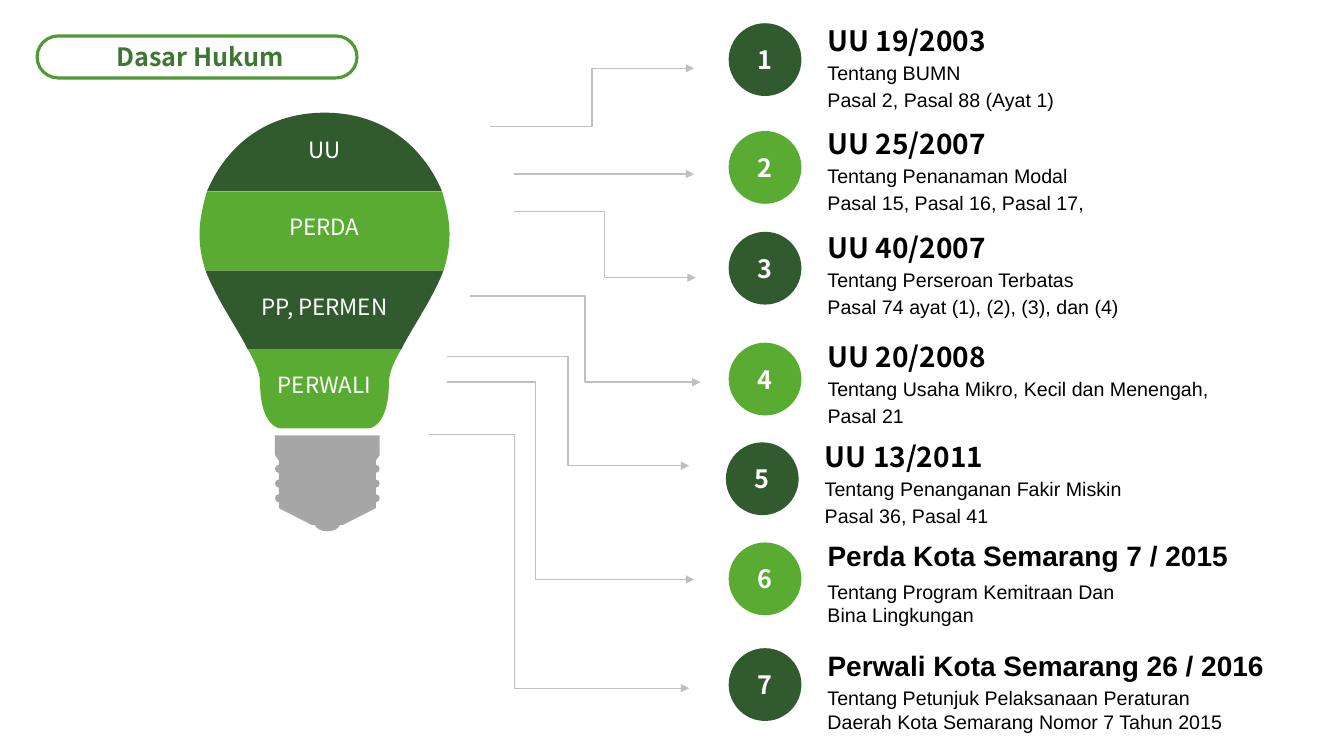
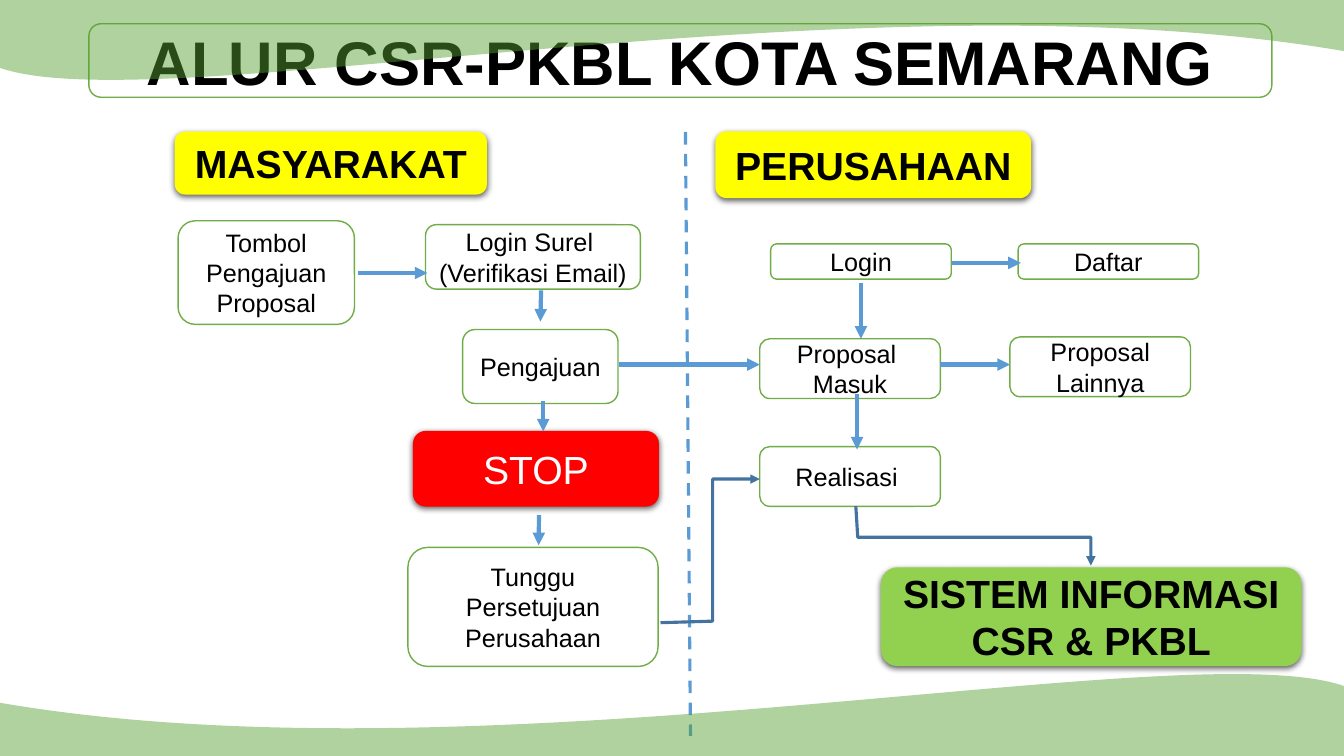
from dataclasses import dataclass

from lxml import etree
from pptx import Presentation
from pptx.dml.color import RGBColor
from pptx.enum.dml import MSO_LINE
from pptx.enum.shapes import MSO_CONNECTOR, MSO_SHAPE
from pptx.enum.text import MSO_ANCHOR, PP_ALIGN
from pptx.oxml.ns import qn
from pptx.util import Pt

WIDTH, HEIGHT = 960, 540
SANS, NOTO = "Arial", "Noto Sans CJK SC"

BLACK = RGBColor(0, 0, 0)
WHITE = RGBColor(255, 255, 255)
DARK = RGBColor(0x31, 0x5B, 0x2F)
LIGHT = RGBColor(0x5A, 0xAB, 0x31)
GRAY = RGBColor(0xA6, 0xA6, 0xA6)
SILVER = RGBColor(0xBF, 0xBF, 0xBF)
RIM = RGBColor(0x4F, 0x9B, 0x33)
MOSS = RGBColor(0x3C, 0x78, 0x32)
EDGE = RGBColor(0x70, 0xAD, 0x47)
YELLOW = RGBColor(255, 255, 0)
RED = RGBColor(255, 0, 0)
LIME = RGBColor(0x92, 0xD0, 0x50)
BLUE = RGBColor(0x5B, 0x9B, 0xD5)
NAVY = RGBColor(0x43, 0x73, 0x9E)
WAVE = RGBColor(0x55, 0xA0, 0x33)

ROUND, OVAL = MSO_SHAPE.ROUNDED_RECTANGLE, MSO_SHAPE.OVAL
STRAIGHT, ELBOW = MSO_CONNECTOR.STRAIGHT, MSO_CONNECTOR.ELBOW
LEFT, CENTER = PP_ALIGN.LEFT, PP_ALIGN.CENTER
TOP, MIDDLE = MSO_ANCHOR.TOP, MSO_ANCHOR.MIDDLE
DASH = MSO_LINE.DASH


@dataclass(frozen=True)
class Band:
    label: str
    color: RGBColor
    text_y: float
    half: list


@dataclass(frozen=True)
class Law:
    title: str
    body: str
    disc_y: float
    text_y: float
    start: tuple
    end: tuple
    wide: float = 246
    bend: float = 0.5
    font: str = NOTO
    gap: float = 26.5
    shift: float = 0


@dataclass(frozen=True)
class Node:
    text: str
    left: float
    top: float
    width: float
    height: float
    fill: RGBColor = WHITE
    size: float = 18
    bold: bool = False
    color: RGBColor = BLACK


# Half outlines run downwards; x is measured from the axis of symmetry.
# A pair is a corner, six numbers are a Bezier curve.
BULB_X, CAP_X = 231.8, 233.8
BANDS = [
    Band("UU", DARK, 97, [(0, 80.5), (45, 80.5, 72, 108, 84, 136.8)]),
    Band("PERDA", LIGHT, 152, [
        (84, 136.8), (87, 147, 89.3, 157.7, 89.3, 167),
        (89.3, 176.4, 87.8, 184.3, 85, 193.3)]),
    Band("PP, PERMEN", DARK, 209.5, [
        (85, 193.3), (77, 214, 63, 233.3, 54.7, 249.7)]),
    Band("PERWALI", LIGHT, 265, [
        (54.7, 249.7), (49.6, 258.5, 46, 266.4, 46, 273.6),
        (46, 297.4, 37.4, 306, 31, 306)]),
]
RIDGES = [step for y in (332, 342.5, 353) for step in (
    (34.6, y), (38.3, y, 38.3, y + 5.8, 34.6, y + 5.8))]
CAP = [(37.4, 311), (37.4, 325), (34.6, 329), *RIDGES, (34.6, 363),
       (11, 375), (9, 375), (7.5, 378, 4, 379.5, 0, 379.5)]

LAWS = [
    Law("UU 19/2003", "Tentang BUMN\nPasal 2, Pasal 88 (Ayat 1)",
        16.6, 13.3, (349.7, 90.2), (495.8, 48.8)),
    Law("UU 25/2007", "Tentang Penanaman Modal\nPasal 15, Pasal 16, Pasal 17,",
        93.6, 86.8, (367, 124.3), (495.8, 124.3)),
    Law("UU 40/2007",
        "Tentang Perseroan Terbatas\nPasal 74 ayat (1), (2), (3), dan (4)",
        165.6, 161, (367, 151), (497, 198.4)),
    Law("UU 20/2008", "Tentang Usaha Mikro, Kecil dan Menengah,\nPasal 21",
        244.8, 239.2, (335.5, 211.5), (500.4, 273), 294.5),
    Law("UU 13/2011", "Tentang Penanganan Fakir Miskin\nPasal 36, Pasal 41",
        316, 310.5, (319, 254.8), (492.3, 332.6), 294.5, shift=-2),
    Law("Perda Kota Semarang 7 / 2015",
        "Tentang Program Kemitraan Dan Bina Lingkungan",
        387.5, 381, (319, 273), (495.8, 414), 246, 0.36, SANS, 29.5),
    Law("Perwali Kota Semarang 26 / 2016",
        "Tentang Petunjuk Pelaksanaan Peraturan "
        "Daerah Kota Semarang Nomor 7 Tahun 2015",
        463, 460, (306.2, 310.3), (492.3, 491.6), 302, 0.33, SANS),
]

NODES = [
    Node("ALUR CSR-PKBL KOTA SEMARANG", 63.5, 17, 845, 52.5, size=44, bold=True),
    Node("MASYARAKAT", 124.8, 94, 223, 45, YELLOW, 28, True),
    Node("PERUSAHAAN", 511, 93.8, 225.5, 47.7, YELLOW, 28, True),
    Node("Tombol Pengajuan Proposal", 127.2, 157.7, 126, 74),
    Node("Login Surel \n(Verifikasi Email)", 304, 160.5, 153.4, 46),
    Node("Pengajuan", 330.5, 235.4, 111, 52.8),
    Node("STOP", 295, 307.8, 175.7, 54, RED, 28, color=WHITE),
    Node("Tunggu Persetujuan Perusahaan", 291.4, 391, 178.7, 85),
    Node("Login", 550.5, 174.2, 129, 25.2),
    Node("Daftar", 727.2, 174.2, 129, 25.2),
    Node("Proposal \nMasuk", 542.7, 242, 129, 42.7),
    Node("Proposal Lainnya", 721.4, 240.7, 129, 42.7),
    Node("Realisasi ", 542.7, 319, 129, 42.7),
    Node("SISTEM INFORMASI\nCSR & PKBL", 629.3, 405.2, 300.4, 70.6, LIME, 28, True),
]
ARROWS = [
    ((255.6, 195), (305.3, 195)), ((386.5, 207.4), (386, 229.7)),
    ((388, 286.5), (388, 308.2)), ((385, 368), (384.8, 389.5)),
    ((442, 260.4), (542.7, 260.4)), ((671.8, 260.4), (721.4, 260.4)),
    ((679.7, 187.8), (729.2, 187.8)), ((615, 202.3), (615, 242)),
    ((612.2, 281.5), (612.2, 321)),
]
ROUTES = [
    [(471.8, 444.8), (509, 443.7), (509, 342.2), (542.7, 342.2)],
    [(611.3, 361.5), (612.7, 383.8), (779.2, 383.8), (779.2, 404)],
]
SWELL = [(960, 490), (847, 451, 349, 562, 0, 502), (0, 542), (960, 542)]
TURN = 538.5


def add_xml(parent, tag: str, **attrs):
    return etree.SubElement(parent, qn(tag), attrs)


def put(shape, text: str, *, size: float = 18, bold: bool = False,
        color: RGBColor = BLACK, font: str = SANS, align=CENTER,
        anchor=MIDDLE, before: float = 0, side: float = 7.2, pad: float = 3.6) -> None:
    """Write one paragraph for each line of the text."""
    frame = shape.text_frame
    frame.word_wrap = True
    frame.vertical_anchor = anchor
    frame.margin_left = frame.margin_right = Pt(side)
    frame.margin_top = frame.margin_bottom = Pt(pad)
    for i, line in enumerate(text.split("\n")):
        para = frame.add_paragraph() if i else frame.paragraphs[0]
        para.alignment = align
        para.space_before = Pt(before)
        run = para.add_run()
        run.text = line
        run.font.size, run.font.bold, run.font.name = Pt(size), bold, font
        run.font.color.rgb = color


def paint(shape, fill: RGBColor | None, edge: RGBColor | None = None,
          weight: float = 1) -> None:
    shape.shadow.inherit = False
    if fill is None:
        shape.fill.background()
    else:
        shape.fill.solid()
        shape.fill.fore_color.rgb = fill
    if edge is None:
        shape.line.fill.background()
    else:
        shape.line.color.rgb = edge
        shape.line.width = Pt(weight)


def add_box(slide, kind, left: float, top: float, width: float, height: float):
    return slide.shapes.add_shape(kind, Pt(left), Pt(top), Pt(width), Pt(height))


def add_label(slide, left: float, top: float, width: float, height: float,
              text: str, **style) -> None:
    box = slide.shapes.add_textbox(Pt(left), Pt(top), Pt(width), Pt(height))
    put(box, text, **style)


def add_tip(shape) -> None:
    """End the line in an arrowhead."""
    add_xml(shape.element.spPr.find(qn("a:ln")), "a:tailEnd", type="triangle")


def add_glow(shape) -> None:
    """Cast a soft shadow downwards."""
    effects = shape.element.spPr.find(qn("a:effectLst"))
    cast = add_xml(effects, "a:outerShdw", blurRad=str(Pt(4.5)), dist=str(Pt(1.5)),
                   dir="5400000", algn="ctr", rotWithShape="0")
    add_xml(add_xml(cast, "a:srgbClr", val=str(BLACK)), "a:alpha", val="63000")


def link(slide, start: tuple, end: tuple, color: RGBColor, weight: float,
         bend: float | None = None, dash=None, tip: bool = True) -> None:
    """Join two points, with an elbow at the share given by bend."""
    kind = STRAIGHT if bend is None else ELBOW
    line = slide.shapes.add_connector(kind, *map(Pt, start + end))
    line.line.color.rgb = color
    line.line.width = Pt(weight)
    if dash is not None:
        line.line.dash_style = dash
    props = line.element.spPr
    if bend is not None:
        guides = props.find(qn("a:prstGeom")).get_or_add_avLst()
        add_xml(guides, "a:gd", name="adj1", fmla=f"val {round(bend * 100000)}")
    if tip:
        add_tip(line)
    add_xml(props, "a:effectLst")


def pairs(step: tuple) -> list:
    return list(zip(step[::2], step[1::2]))


def trace(steps: list, count: int = 40) -> list:
    """List points along the outline, to find its extent."""
    points = []
    for step in steps:
        if len(step) == 2:
            points.append(step)
            continue
        knots = [points[-1], *pairs(step)]
        for i in range(1, count + 1):
            t = i / count
            parts = ((1 - t) ** 3, 3 * t * (1 - t) ** 2, 3 * t * t * (1 - t), t ** 3)
            points.append(tuple(
                sum(p * knot[axis] for p, knot in zip(parts, knots)) for axis in (0, 1)))
    return points


def remap(step: tuple, scale: float, dx: float, flip: float = 1, dy: float = 0) -> tuple:
    return tuple(v for x, y in pairs(step) for v in (dx + scale * x, dy + flip * y))


def mirror(half: list, axis: float) -> list:
    """Close a half outline with its reflection."""
    back = [half[-1][-2:]] if half[-1][-2] else []
    for prior, step in zip(half[-2::-1], half[:0:-1]):
        goal = prior[-2:]
        back.append(step[2:4] + step[:2] + goal if len(step) == 6 else goal)
    return [remap(s, 1, axis) for s in half] + [remap(s, -1, axis) for s in back]


def outline(slide, steps: list, close: bool = True):
    """Draw a freeform, turning its segments into true curves."""
    first, *rest = [(Pt(x), Pt(y)) for x, y in trace(steps)]
    pen = slide.shapes.build_freeform(*first, scale=1.0)
    pen.add_line_segments(rest, close=close)
    shape = pen.convert_to_shape()
    route = next(shape.element.iter(qn("a:path")))
    for part in list(route):
        route.remove(part)
    for i, step in enumerate(steps):
        tag = "a:cubicBezTo" if len(step) == 6 else "a:lnTo" if i else "a:moveTo"
        part = add_xml(route, tag)
        for x, y in pairs(step):
            add_xml(part, "a:pt", x=str(Pt(x) - shape.left), y=str(Pt(y) - shape.top))
    if close:
        add_xml(route, "a:close")
    return shape


def draw_bulb(slide) -> None:
    paint(outline(slide, mirror(CAP, CAP_X)), GRAY)
    for band in BANDS:
        paint(outline(slide, mirror(band.half, BULB_X)), band.color)
        add_label(slide, BULB_X - 60, band.text_y, 120, 19.5, band.label,
                  size=16, color=WHITE, font=NOTO, side=0, pad=0)


def draw_law(slide, law: Law, num: int) -> None:
    disc = add_box(slide, OVAL, 520.5 + law.shift, law.disc_y, 52, 52)
    paint(disc, DARK if num % 2 else LIGHT)
    put(disc, str(num), bold=True, color=WHITE, font=NOTO)
    bend = None if law.start[1] == law.end[1] else law.bend
    link(slide, law.start, law.end, SILVER, 1, bend)
    left = 584 + law.shift
    add_label(slide, left, law.text_y + law.gap, law.wide, 44,
              law.body, size=14, align=LEFT, anchor=TOP, before=2.8)
    add_label(slide, left, law.text_y, 356, 31.5, law.title,
              size=20, bold=True, font=law.font, align=LEFT, anchor=TOP)


def draw_node(slide, node: Node) -> None:
    box = add_box(slide, ROUND, node.left, node.top, node.width, node.height)
    plain = node.fill == WHITE
    paint(box, node.fill, EDGE if plain else None)
    if not plain:
        add_glow(box)
    put(box, node.text, size=node.size, bold=node.bold, color=node.color)


def draw_wave(slide, steps: list) -> None:
    shape = outline(slide, steps)
    paint(shape, WAVE)
    tint = shape.element.spPr.find(qn("a:solidFill"))[0]
    add_xml(tint, "a:alpha", val="47000")


def build_laws(slide) -> None:
    draw_bulb(slide)
    pill = add_box(slide, ROUND, 26.5, 25.7, 228.5, 30)
    pill.adjustments[0] = 0.5
    paint(pill, WHITE, RIM, 2.25)
    add_label(slide, 65, 25.7, 156, 29, "Dasar Hukum",
              bold=True, color=MOSS, font=NOTO, anchor=TOP)
    for num, law in enumerate(LAWS, 1):
        draw_law(slide, law, num)


def build_flow(slide) -> None:
    title, *nodes = NODES
    draw_node(slide, title)
    link(slide, (489.6, 94.3), (493.2, 525.6), BLUE, 2.25, dash=DASH, tip=False)
    for node in nodes:
        draw_node(slide, node)
    for start, end in ARROWS:
        link(slide, start, end, BLUE, 3)
    for route in ROUTES:
        shape = outline(slide, route, close=False)
        paint(shape, None, NAVY, 2.25)
        add_tip(shape)
    draw_wave(slide, SWELL)
    draw_wave(slide, [remap(step, -1, WIDTH, -1, TURN) for step in SWELL])


def main() -> None:
    deck = Presentation()
    deck.slide_width, deck.slide_height = Pt(WIDTH), Pt(HEIGHT)
    for build in (build_laws, build_flow):
        build(deck.slides.add_slide(deck.slide_layouts[6]))
    deck.save("out.pptx")


if __name__ == "__main__":
    main()
